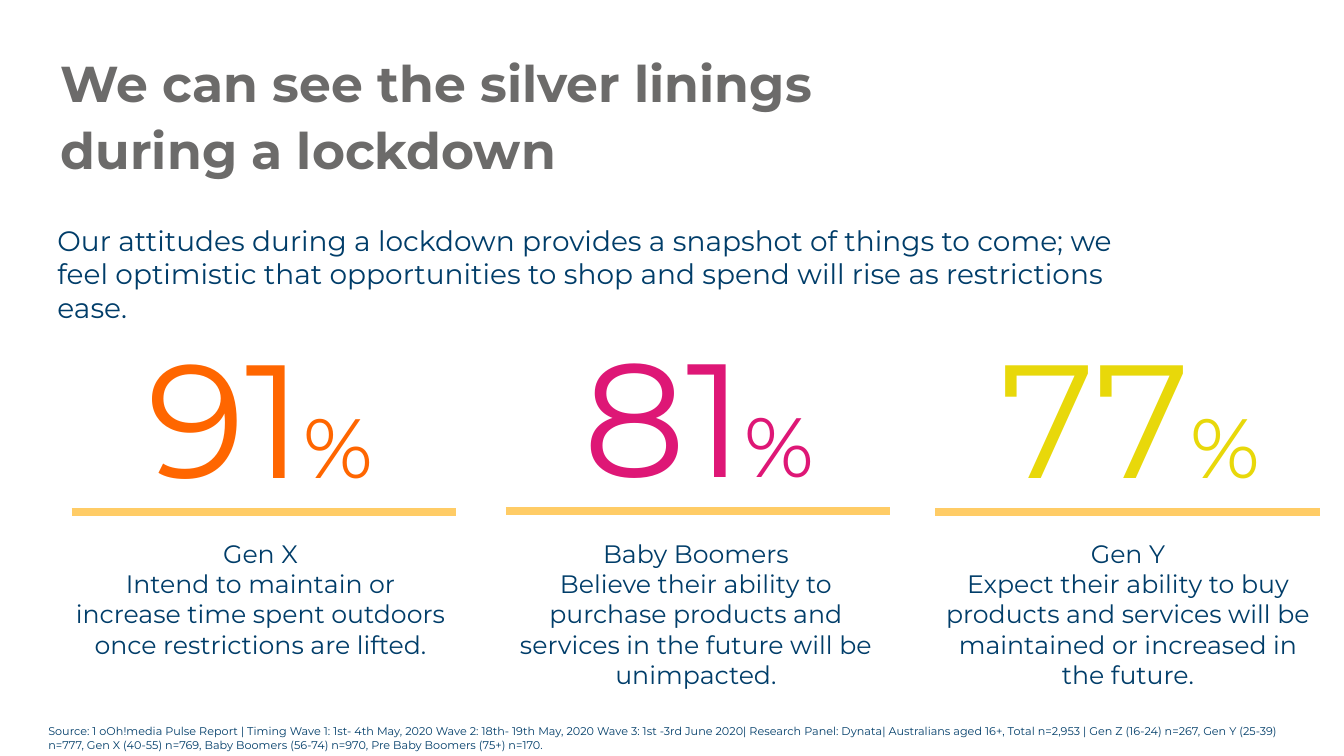
import pptx
import pptx.dml.color
import pptx.enum.shapes
import pptx.enum.text
import pptx.oxml
import pptx.util

Pt = pptx.util.Pt
ALIGN = pptx.enum.text.PP_ALIGN


def colour(hex_string):
    return pptx.dml.color.RGBColor.from_string(hex_string)


class SlideBuilder:
    """Holds the text style and the slide being built."""

    font = "Montserrat"
    navy = "003D69"
    amber = "FFCC66"

    def __init__(self, slide):
        self.slide = slide

    def style(self, run, size, hex_string, bold=False):
        run.font.name = self.font
        run.font.size = Pt(size)
        run.font.bold = bold
        run.font.color.rgb = colour(hex_string)

    def title(self, wording, left, top, width, height):
        heading = self.slide.shapes.title
        heading.left, heading.top = Pt(left), Pt(top)
        heading.width, heading.height = Pt(width), Pt(height)
        frame = heading.text_frame
        frame.text = wording
        frame.word_wrap = True
        frame.auto_size = pptx.enum.text.MSO_AUTO_SIZE.NONE
        frame.vertical_anchor = pptx.enum.text.MSO_ANCHOR.TOP
        frame.margin_left = frame.margin_right = 0
        frame.margin_top = frame.margin_bottom = 0
        paragraph = frame.paragraphs[0]
        paragraph.alignment = ALIGN.LEFT
        paragraph.line_spacing = 1.1
        self.style(paragraph.runs[0], 36, "6C6B6A", bold=True)

    def text(self, wording, left, top, width, height, size, align=ALIGN.LEFT):
        box = self.slide.shapes.add_textbox(Pt(left), Pt(top), Pt(width), Pt(height))
        frame = box.text_frame
        frame.word_wrap = True
        frame.text = wording
        for paragraph in frame.paragraphs:
            paragraph.alignment = align
            for run in paragraph.runs:
                self.style(run, size, self.navy)
        return frame

    def percentage(self, value, left, top, width, height, hex_string):
        frame = self.text(value, left, top, width, height, 115, ALIGN.CENTER)
        figure = frame.paragraphs[0]
        figure.add_run().text = "%"
        for run, size in zip(figure.runs, (115, 60)):
            self.style(run, size, hex_string)

    def rule(self, left, top, width):
        line = self.slide.shapes.add_connector(
            pptx.enum.shapes.MSO_CONNECTOR.STRAIGHT,
            Pt(left), Pt(top), Pt(left + width), Pt(top))
        line.line.color.rgb = colour(self.amber)
        line.line.width = Pt(6)
        line._element.spPr.append(pptx.oxml.parse_xml(
            '<a:effectLst xmlns:a="http://schemas.openxmlformats.org/drawingml/2006/main"/>'))


def main():
    deck = pptx.Presentation()
    deck.slide_width, deck.slide_height = Pt(960), Pt(540)
    builder = SlideBuilder(deck.slides.add_slide(deck.slide_layouts[5]))

    builder.title("We can see the silver linings during a lockdown", 43.5, 33, 664.5, 43)
    builder.text(
        "Our attitudes during a lockdown provides a snapshot of things to come; we feel "
        "optimistic that opportunities to shop and spend will rise as restrictions ease.",
        34, 156, 783.5, 80, 20)

    generations = [
        ("91", "FF6600", "Gen X\nIntend to maintain or increase time spent outdoors "
         "once restrictions are lifted.",
         (46.8, 223.2, 278.6), (51.1, 365.8), (46.8, 278.6)),
        ("81", "DE1776", "Baby Boomers\nBelieve their ability to purchase products and "
         "services in the future will be unimpacted.",
         (347, 222.5, 304.6), (361.4, 365), (357.8, 278.6)),
        ("77", "E8D80A", "Gen Y\nExpect their ability to buy products and services will "
         "be maintained or increased in the future.",
         (672.5, 223.2, 270), (668.2, 365.8), (668.2, 275)),
    ]
    for value, hex_string, finding, figure_place, rule_place, finding_place in generations:
        builder.percentage(value, *figure_place, 157.7, hex_string)
        builder.rule(*rule_place, 274.5)
        finding_left, finding_width = finding_place
        builder.text(finding, finding_left, 380.9, finding_width, 116.6, 18, ALIGN.CENTER)

    builder.text(
        "Source: 1 oOh!media Pulse Report | Timing Wave 1: 1st- 4th May, 2020 "
        "Wave 2: 18th- 19th May, 2020 Wave 3: 1st -3rd June 2020| Research Panel: Dynata| "
        "Australians aged 16+, Total n=2,953 | Gen Z (16-24) n=267, Gen Y (25-39) n=777, "
        "Gen X (40-55) n=769, Baby Boomers (56-74) n=970, Pre Baby Boomers (75+) n=170.",
        27.4, 514, 916, 26, 8)

    deck.save("out.pptx")


if __name__ == "__main__":
    main()
